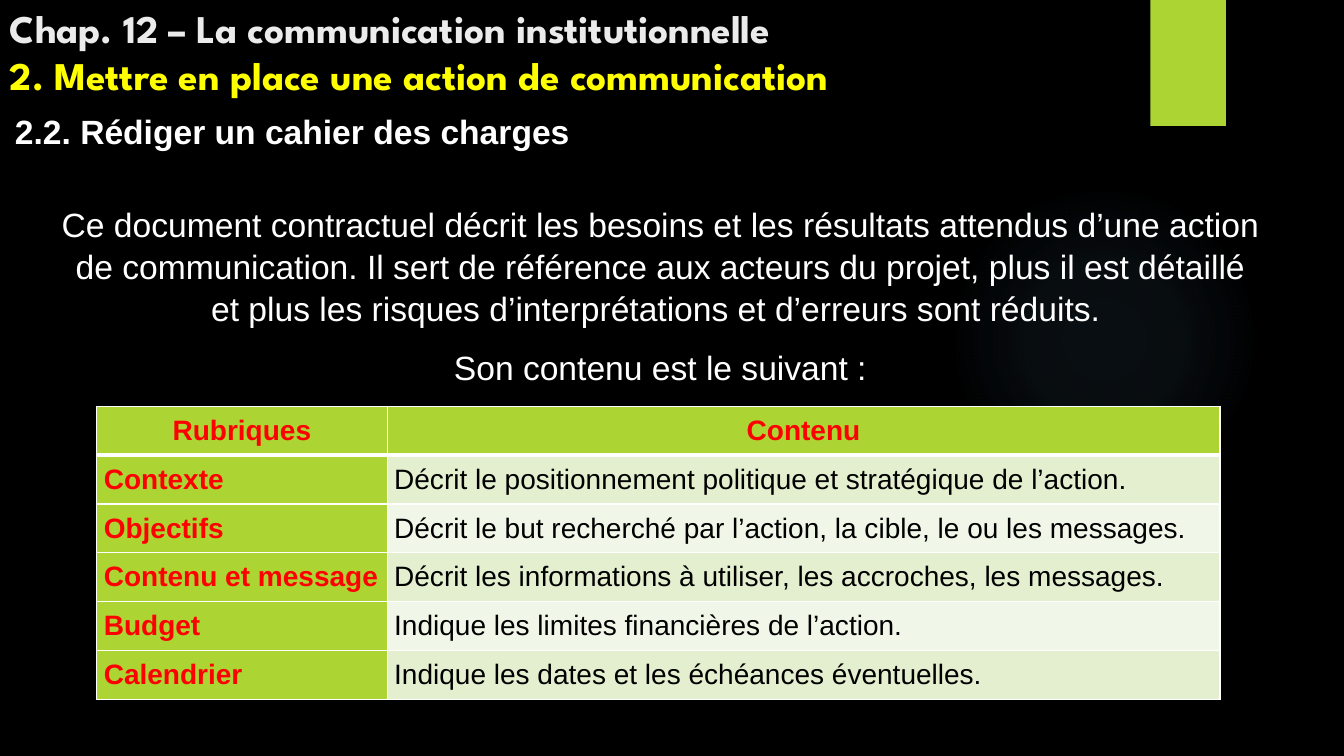
from lxml import etree
from pptx import Presentation
from pptx.dml.color import RGBColor
from pptx.enum.shapes import MSO_SHAPE
from pptx.enum.text import MSO_ANCHOR, PP_ALIGN
from pptx.oxml import parse_xml
from pptx.oxml.ns import qn
from pptx.util import Inches, Pt

OVAL, RECT = MSO_SHAPE.OVAL, MSO_SHAPE.RECTANGLE
MIDDLE, BOTTOM, TOP = MSO_ANCHOR.MIDDLE, MSO_ANCHOR.BOTTOM, MSO_ANCHOR.TOP
LEFT, CENTER, JUSTIFY = PP_ALIGN.LEFT, PP_ALIGN.CENTER, PP_ALIGN.JUSTIFY
A_NS = "http://schemas.openxmlformats.org/drawingml/2006/main"

COLORS = {
    "black": "000000", "white": "FFFFFF", "title": "EBEBEB", "yellow": "FFFF00",
    "green": "ACD433", "red": "FF0000", "glow": "7AC4F0",
    "band_dark": "E3EFCE", "band_light": "F1F7E8",
}
TITLE = [
    ("Chap. 12 – La communication institutionnelle", "title"),
    ("2. Mettre en place une action de communication", "yellow"),
]
INTRO = [
    "Ce document contractuel décrit les besoins et les résultats attendus d’une action "
    "de communication. Il sert de référence aux acteurs du projet, plus il est détaillé "
    "et plus les risques d’interprétations et d’erreurs sont réduits. ",
    "Son contenu est le suivant :",
]
ROWS = [
    ("Rubriques", "Contenu"),
    ("Contexte", "Décrit le positionnement politique et stratégique de l’action."),
    ("Objectifs", "Décrit le but recherché par l’action, la cible, le ou les messages."),
    ("Contenu et message", "Décrit les informations à utiliser, les accroches, les messages."),
    ("Budget", "Indique les limites financières de l’action."),
    ("Calendrier", "Indique les dates et les échéances éventuelles."),
]


def rgb(name):
    return RGBColor.from_string(COLORS[name])


class SlideBuilder:
    def __init__(self, prs):
        self.s = prs.slides.add_slide(prs.slide_layouts[6])
        fill = self.s.background.fill
        fill.solid()
        fill.fore_color.rgb = rgb("black")

    def style(self, r, color, size, bold=False, name="Arial"):
        values = {"size": Pt(size), "bold": bold, "name": name}
        for key, value in values.items():
            setattr(r.font, key, value)
        r.font.color.rgb = rgb(color)

    def shape(self, kind, box, color):
        sp = self.s.shapes.add_shape(kind, *map(Inches, box))
        sp.shadow.inherit = False
        sp.line.fill.background()
        sp.fill.solid()
        sp.fill.fore_color.rgb = rgb(color)
        return sp

    def glow(self, box, stops):
        sp = self.shape(OVAL, box, "glow")
        gs = "".join(
            f'<a:gs pos="{pos * 1000}"><a:srgbClr val="{COLORS["glow"]}">'
            f'<a:alpha val="{alpha * 1000}"/></a:srgbClr></a:gs>' for pos, alpha in stops)
        gradient = parse_xml(
            f'<a:gradFill xmlns:a="{A_NS}"><a:gsLst>{gs}</a:gsLst><a:path path="circle">'
            '<a:fillToRect l="50000" t="50000" r="50000" b="50000"/></a:path></a:gradFill>')
        solid = sp.element.spPr.find(qn("a:solidFill"))
        solid.getparent().replace(solid, gradient)

    def tab(self, box):
        sp = self.shape(RECT, box, "green")
        effects = sp.element.spPr.find(qn("a:effectLst"))
        effects.append(parse_xml(
            f'<a:outerShdw xmlns:a="{A_NS}" blurRad="{Pt(3)}" dist="{Pt(2)}" dir="5400000" '
            f'rotWithShape="0"><a:srgbClr val="{COLORS["black"]}"><a:alpha val="45000"/>'
            '</a:srgbClr></a:outerShdw>'))

    def frame(self, box, anchor=TOP, wrap=True):
        tf = self.s.shapes.add_textbox(*map(Inches, box)).text_frame
        tf.word_wrap, tf.vertical_anchor = wrap, anchor
        return tf

    def title(self, box, lines):
        p = self.frame(box, BOTTOM).paragraphs[0]
        for i, (text, color) in enumerate(lines):
            if i:
                p.add_line_break()
            r = p.add_run()
            r.text = text
            self.style(r, color, 28, True, "League Spartan")

    def text(self, box, paragraphs, align, bold=False, wrap=True):
        tf = self.frame(box, wrap=wrap)
        for i, text in enumerate(paragraphs):
            p = tf.add_paragraph() if i else tf.paragraphs[0]
            values = {"alignment": align, "line_spacing": 1.05,
                      "space_before": Pt(6 if i else 0), "space_after": Pt(6)}
            for key, value in values.items():
                setattr(p, key, value)
            r = p.add_run()
            r.text = text
            self.style(r, "white", 24, bold)

    def borders(self, cell, widths):
        tcPr = cell._tc.get_or_add_tcPr()
        for i, (side, width) in enumerate(widths.items()):
            ln = etree.Element(qn(f"a:ln{side}"), w=str(Pt(width)))
            fill = etree.SubElement(ln, qn("a:solidFill"))
            etree.SubElement(fill, qn("a:srgbClr"), val=COLORS["white"])
            tcPr.insert(i, ln)

    def cell(self, cell, text, fill, color, bold, align):
        values = {"margin_left": Inches(0.07), "margin_right": Inches(0.07),
                  "margin_top": 0, "margin_bottom": 0, "vertical_anchor": MIDDLE}
        for key, value in values.items():
            setattr(cell, key, value)
        cell.fill.solid()
        cell.fill.fore_color.rgb = rgb(fill)
        p = cell.text_frame.paragraphs[0]
        p.alignment = align
        r = p.add_run()
        r.text = text
        self.style(r, color, 20, bold)

    def table(self, box, widths, rows):
        table = self.s.shapes.add_table(len(rows), len(widths), *map(Inches, box)).table
        for column, width in zip(table.columns, widths):
            column.width = Inches(width)
        for i, row in enumerate(rows):
            for j, text in enumerate(row):
                cell = table.cell(i, j)
                if i == 0 or j == 0:
                    self.cell(cell, text, "green", "red", True, LEFT if i else CENTER)
                else:
                    band = "band_dark" if i % 2 else "band_light"
                    self.cell(cell, text, band, "black", False, LEFT)
                self.borders(cell, {"L": 1, "R": 1, "T": 3 if i == 1 else 1,
                                    "B": 1 if i else 3})


def main():
    prs = Presentation()
    prs.slide_width, prs.slide_height = Inches(13.33), Inches(7.5)
    slide = SlideBuilder(prs)
    slide.glow((9.41, 1.83, 3.08, 3.08), [(0, 7), (36, 6), (69, 0)])
    slide.tab((11.41, 0, 0.75, 1.25))
    slide.title((0, 0, 12.95, 1.03), TITLE)
    slide.text((0.05, 1.03, 5.76, 0.5), ["2.2. Rédiger un cahier des charges"],
               JUSTIFY, bold=True, wrap=False)
    slide.text((0.47, 1.95, 12.16, 1.88), INTRO, CENTER)
    slide.table((0.96, 4.03, 11.15, 2.91), (2.88, 8.26), ROWS)
    prs.save("out.pptx")


if __name__ == "__main__":
    main()
